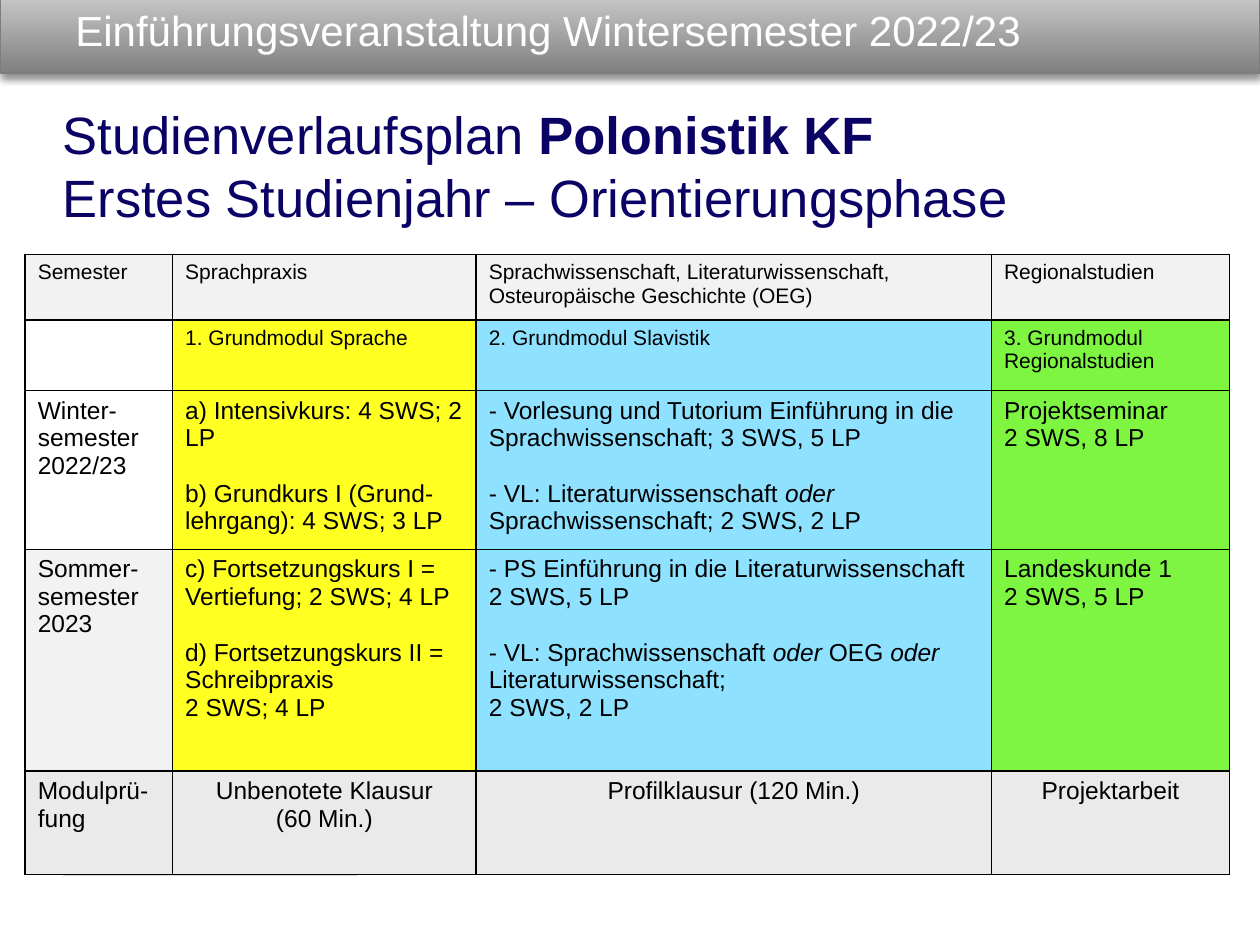
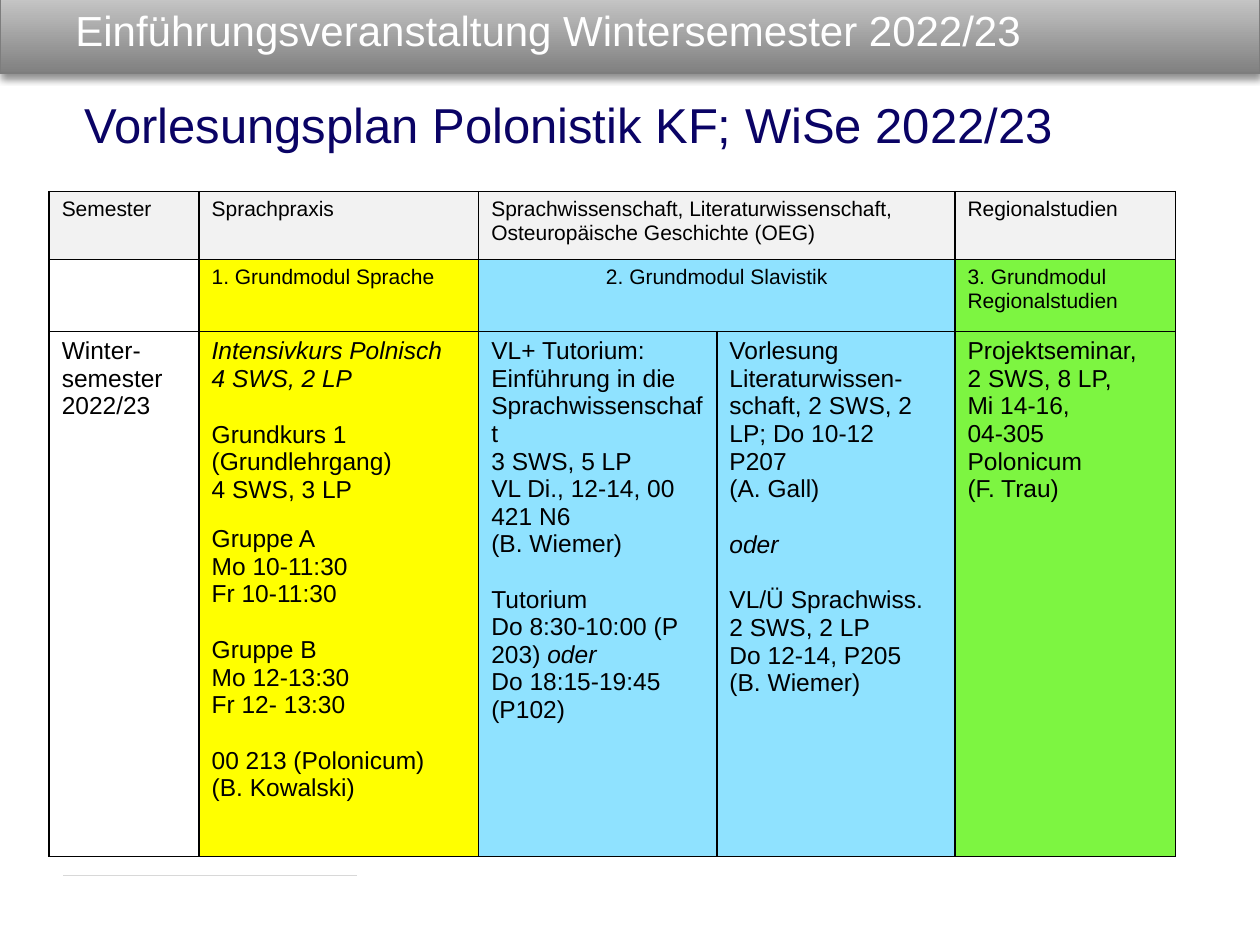
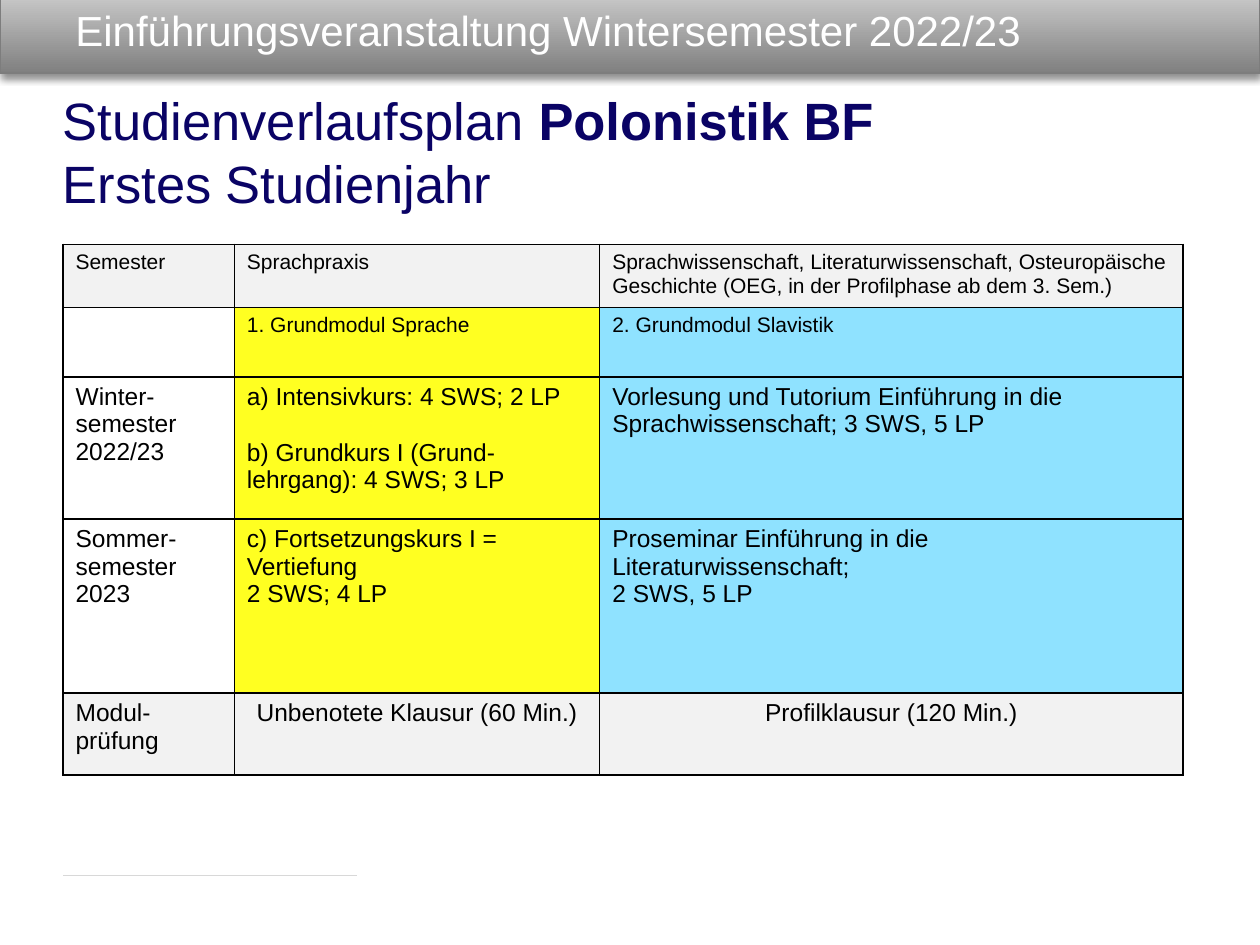
from dataclasses import dataclass
from typing import NamedTuple, Sequence

from lxml import etree
from pptx import Presentation
from pptx import util as u
from pptx.dml.color import RGBColor
from pptx.enum import shapes, text
from pptx.oxml import ns

BLACK = RGBColor(0x00, 0x00, 0x00)
WHITE = RGBColor(0xFF, 0xFF, 0xFF)
NAVY = RGBColor(0x0A, 0x03, 0x65)
BAND_DARK = RGBColor(0x80, 0x80, 0x80)
BAND_LIGHT = RGBColor(0xCD, 0xCD, 0xCD)
BAND_EDGE = RGBColor(0x7D, 0x7D, 0x7D)
RULE = RGBColor(0xD8, 0xD8, 0xD8)
HEADING = RGBColor(0xF2, 0xF2, 0xF2)
EXAM = RGBColor(0xEA, 0xEA, 0xEA)
LANGUAGE = RGBColor(0xFF, 0xFF, 0x21)
BRIGHT_LANGUAGE = RGBColor(0xFF, 0xFF, 0x00)
SLAVIC = RGBColor(0x8F, 0xE2, 0xFF)
REGIONAL = RGBColor(0x7D, 0xF5, 0x41)

FONT = "Arial"
LINE_SPACING = 1.15
LEFT, CENTER = text.PP_ALIGN.LEFT, text.PP_ALIGN.CENTER
WIDTH, HEIGHT = u.Inches(10), u.Inches(7.5)
COLUMN, ROW = WIDTH / 100, HEIGHT / 75


class Gap(NamedTuple):
    wording: str
    size: float = 14


class Box(NamedTuple):
    column: float
    row: float
    columns: float
    rows: float

    def lengths(self) -> tuple[int, int, int, int]:
        return (across(self.column), down(self.row), across(self.columns), down(self.rows))


@dataclass(frozen=True)
class Cell:
    lines: Sequence[str | Gap] = ()
    fill: RGBColor | None = None
    size: float = 14
    align: text.PP_ALIGN = LEFT
    span: int = 1


@dataclass(frozen=True)
class Plan:
    title: str
    title_box: Box
    title_size: float
    corner: tuple[float, float]
    columns: Sequence[float]
    rows: Sequence[float]
    cells: Sequence[Sequence[Cell]]


def across(columns: float) -> int:
    return round(columns * COLUMN)


def down(rows: float) -> int:
    return round(rows * ROW)


def write(frame, lines: Sequence[str | Gap], *, size: float, color: RGBColor = BLACK,
          align: text.PP_ALIGN = LEFT, emphasis: str = "italic",
          anchor: text.MSO_ANCHOR = text.MSO_ANCHOR.TOP) -> None:
    frame.word_wrap = True
    frame.vertical_anchor = anchor
    for number, line in enumerate(lines):
        paragraph = frame.add_paragraph() if number else frame.paragraphs[0]
        paragraph.alignment = align
        if isinstance(line, Gap):
            paragraph.space_before = u.Pt(round(line.size * LINE_SPACING, 1))
            line = line.wording
        for part, stretch in enumerate(line.split("*")):
            for piece, wording in enumerate(stretch.split("\n")):
                if piece:
                    paragraph.add_line_break()
                if not wording:
                    continue
                run = paragraph.add_run()
                run.text = wording
                run.font.name = FONT
                run.font.size = u.Pt(size)
                run.font.color.rgb = color
                if part % 2:
                    setattr(run.font, emphasis, True)


def add_text(slide, box: Box, lines: Sequence[str], **formats) -> None:
    write(slide.shapes.add_textbox(*box.lengths()).text_frame, lines, **formats)


def add_frame(slide) -> None:
    band = slide.shapes.add_shape(shapes.MSO_SHAPE.RECTANGLE, *Box(0, -0.8, 100, 6.6).lengths())
    band.fill.gradient()
    band.fill.gradient_angle = 90
    for stop, color in zip(band.fill.gradient_stops, (BAND_DARK, BAND_LIGHT)):
        stop.color.rgb = color
    band.line.color.rgb = BAND_EDGE
    band.line.width = u.Pt(0.75)
    band.shadow.inherit = False
    effects = band._element.spPr.find(ns.qn("a:effectLst"))
    shadow = etree.SubElement(effects, ns.qn("a:outerShdw"), blurRad=str(u.Pt(4)),
                              dist=str(u.Pt(3)), dir="5400000", rotWithShape="0")
    shade = etree.SubElement(shadow, ns.qn("a:srgbClr"), val=str(BLACK))
    etree.SubElement(shade, ns.qn("a:alpha"), val="43000")

    rule = slide.shapes.add_connector(shapes.MSO_CONNECTOR.STRAIGHT, across(5), down(69.5),
                                      across(28.3), down(69.5))
    rule.line.color.rgb = RULE
    rule.line.width = u.Pt(0.75)
    etree.SubElement(rule._element.spPr, ns.qn("a:effectLst"))

    add_text(slide, Box(5, 0, 92.7, 4.7), ["Einführungsveranstaltung Wintersemester 2022/23"],
             size=24, color=WHITE, anchor=text.MSO_ANCHOR.MIDDLE)


def add_borders(cell) -> None:
    properties = cell._tc.get_or_add_tcPr()
    for position, side in enumerate(("lnL", "lnR", "lnT", "lnB")):
        border = etree.Element(ns.qn(f"a:{side}"), w=str(u.Pt(1)))
        fill = etree.SubElement(border, ns.qn("a:solidFill"))
        etree.SubElement(fill, ns.qn("a:srgbClr"), val=str(BLACK))
        properties.insert(position, border)


def add_schedule(slide, plan: Plan) -> None:
    box = Box(*plan.corner, sum(plan.columns), sum(plan.rows))
    table = slide.shapes.add_table(len(plan.rows), len(plan.columns), *box.lengths()).table
    table.first_row = table.horz_banding = False
    for column, columns in zip(table.columns, plan.columns):
        column.width = across(columns)
    for row, rows in zip(table.rows, plan.rows):
        row.height = down(rows)
    for row, entries in enumerate(plan.cells):
        column = 0
        for entry in entries:
            start, end = column, column + entry.span
            for position in range(start, end):
                cell = table.cell(row, position)
                if entry.fill is None:
                    cell.fill.background()
                else:
                    cell.fill.solid()
                    cell.fill.fore_color.rgb = entry.fill
                add_borders(cell)
            origin = table.cell(row, start)
            if entry.span > 1:
                origin.merge(table.cell(row, end - 1))
            write(origin.text_frame, entry.lines, size=entry.size, align=entry.align)
            column = end


def add_plan(deck, plan: Plan) -> None:
    slide = deck.slides.add_slide(deck.slide_layouts[6])
    add_frame(slide)
    add_text(slide, plan.title_box, [plan.title], size=plan.title_size, color=NAVY,
             emphasis="bold")
    add_schedule(slide, plan)


def heading(wording: str, span: int = 1) -> Cell:
    return Cell([wording], HEADING, 12, span=span)


def module(wording: str, fill: RGBColor, align: text.PP_ALIGN = LEFT, span: int = 1) -> Cell:
    return Cell([wording], fill, 12, align, span)


def exam(fill: RGBColor, *lines: str) -> Cell:
    return Cell(lines, fill, align=CENTER)


SEMESTER = heading("Semester")
PRACTICE = heading("Sprachpraxis")
REGIONS = heading("Regionalstudien")
SUBJECTS = "Sprachwissenschaft, Literaturwissenschaft, Osteuropäische Geschichte (OEG)"
LANGUAGE_MODULE = "1. Grundmodul Sprache"
SLAVIC_MODULE = "2. Grundmodul Slavistik"
REGIONAL_MODULE = module("3. Grundmodul Regionalstudien", REGIONAL)
WINTER = Cell(["Winter-semester 2022/23"])
SUMMER = ["Sommer-semester 2023"]
WINTER_COURSES = Cell(["a) Intensivkurs: 4 SWS; 2 LP",
                       Gap("b) Grundkurs I (Grund-lehrgang): 4 SWS; 3 LP")], LANGUAGE)

PLANS = [
    Plan(
        "Studienverlaufsplan *Polonistik KF*\nErstes Studienjahr – Orientierungsphase",
        Box(4, 7.6, 93.7, 11), 30, (2, 20.2),
        (11.7, 24.1, 40.9, 18.9), (5.2, 5.6, 12.6, 17.6, 8.2),
        [
            [SEMESTER, PRACTICE, heading(SUBJECTS), REGIONS],
            [Cell(), module(LANGUAGE_MODULE, LANGUAGE), module(SLAVIC_MODULE, SLAVIC),
             REGIONAL_MODULE],
            [WINTER, WINTER_COURSES,
             Cell(["- Vorlesung und Tutorium Einführung in die",
                   "Sprachwissenschaft; 3 SWS, 5 LP",
                   Gap("- VL: Literaturwissenschaft *oder* Sprachwissenschaft; 2 SWS, 2 LP")],
                  SLAVIC),
             Cell(["Projektseminar", "2 SWS, 8 LP"], REGIONAL)],
            [Cell(SUMMER, HEADING),
             Cell(["c) Fortsetzungskurs I = Vertiefung; 2 SWS; 4 LP",
                   Gap("d) Fortsetzungskurs II = Schreibpraxis"), "2 SWS; 4 LP"], LANGUAGE),
             Cell(["- PS Einführung in die Literaturwissenschaft 2 SWS, 5 LP",
                   Gap("- VL: Sprachwissenschaft *oder* OEG *oder* Literaturwissenschaft;"),
                   "2 SWS, 2 LP"], SLAVIC),
             Cell(["Landeskunde 1", "2 SWS, 5 LP"], REGIONAL)],
            [Cell(["Modulprü-fung"], EXAM), exam(EXAM, "Unbenotete Klausur", "(60 Min.)"),
             exam(EXAM, "Profilklausur (120 Min.)"), exam(EXAM, "Projektarbeit")],
        ],
    ),
    Plan(
        "Vorlesungsplan Polonistik KF; WiSe 2022/23",
        Box(5.7, 7, 83.7, 5.7), 28, (3.9, 15.2),
        (11.9, 22.2, 18.9, 18.9, 17.5), (5.4, 5.7, 41.7),
        [
            [SEMESTER, PRACTICE, heading(SUBJECTS, 2), REGIONS],
            [Cell(), module(LANGUAGE_MODULE, BRIGHT_LANGUAGE),
             module(SLAVIC_MODULE, SLAVIC, CENTER, 2), REGIONAL_MODULE],
            [WINTER,
             Cell(["*Intensivkurs Polnisch*", "*4 SWS, 2 LP*",
                   Gap("Grundkurs 1 (Grundlehrgang)"), "4 SWS, 3 LP",
                   Gap("Gruppe A", 11), "Mo 10-11:30", "Fr 10-11:30",
                   Gap("Gruppe B"), "Mo 12-13:30", "Fr 12- 13:30",
                   Gap("00 213 (Polonicum)"), "(B. Kowalski)"], BRIGHT_LANGUAGE),
             Cell(["VL+ Tutorium: Einführung in die Sprachwissenschaft", "3 SWS, 5 LP",
                   "VL Di., 12-14, 00 421 N6", "(B. Wiemer)",
                   Gap("Tutorium"), "Do 8:30-10:00 (P 203) *oder*",
                   "Do 18:15-19:45 (P102)"], SLAVIC),
             Cell(["Vorlesung Literaturwissen-schaft, 2 SWS, 2 LP; Do 10-12", "P207",
                   "(A. Gall)", Gap("*oder*"),
                   Gap("VL/Ü Sprachwiss."), "2 SWS, 2 LP", "Do 12-14, P205",
                   "(B. Wiemer)"], SLAVIC),
             Cell(["Projektseminar,", "2 SWS, 8 LP,", "Mi 14-16,", "04-305 Polonicum",
                   "(F. Trau)"], REGIONAL)],
        ],
    ),
    Plan(
        "Studienverlaufsplan *Polonistik BF*\nErstes Studienjahr",
        Box(4, 6.5, 89.9, 11), 30, (5, 19.4),
        (13.6, 29, 46.3), (5, 5.5, 11.3, 13.8, 6.5),
        [
            [SEMESTER, PRACTICE,
             heading(SUBJECTS.replace(")", ", in der Profilphase ab dem 3. Sem.)"))],
            [Cell(), module(LANGUAGE_MODULE, LANGUAGE), module(SLAVIC_MODULE, SLAVIC)],
            [WINTER, WINTER_COURSES,
             Cell(["Vorlesung und Tutorium Einführung in die",
                   "Sprachwissenschaft; 3 SWS, 5 LP"], SLAVIC)],
            [Cell(SUMMER),
             Cell(["c) Fortsetzungskurs I = Vertiefung", "2 SWS; 4 LP"], LANGUAGE),
             Cell(["Proseminar Einführung in die Literaturwissenschaft;", "2 SWS, 5 LP"],
                  SLAVIC)],
            [Cell(["Modul-prüfung"], HEADING), exam(HEADING, "Unbenotete Klausur (60 Min.)"),
             exam(HEADING, "Profilklausur (120 Min.)")],
        ],
    ),
]


def main() -> None:
    deck = Presentation()
    deck.slide_width, deck.slide_height = WIDTH, HEIGHT
    for plan in PLANS:
        add_plan(deck, plan)
    deck.save("out.pptx")


if __name__ == "__main__":
    main()
